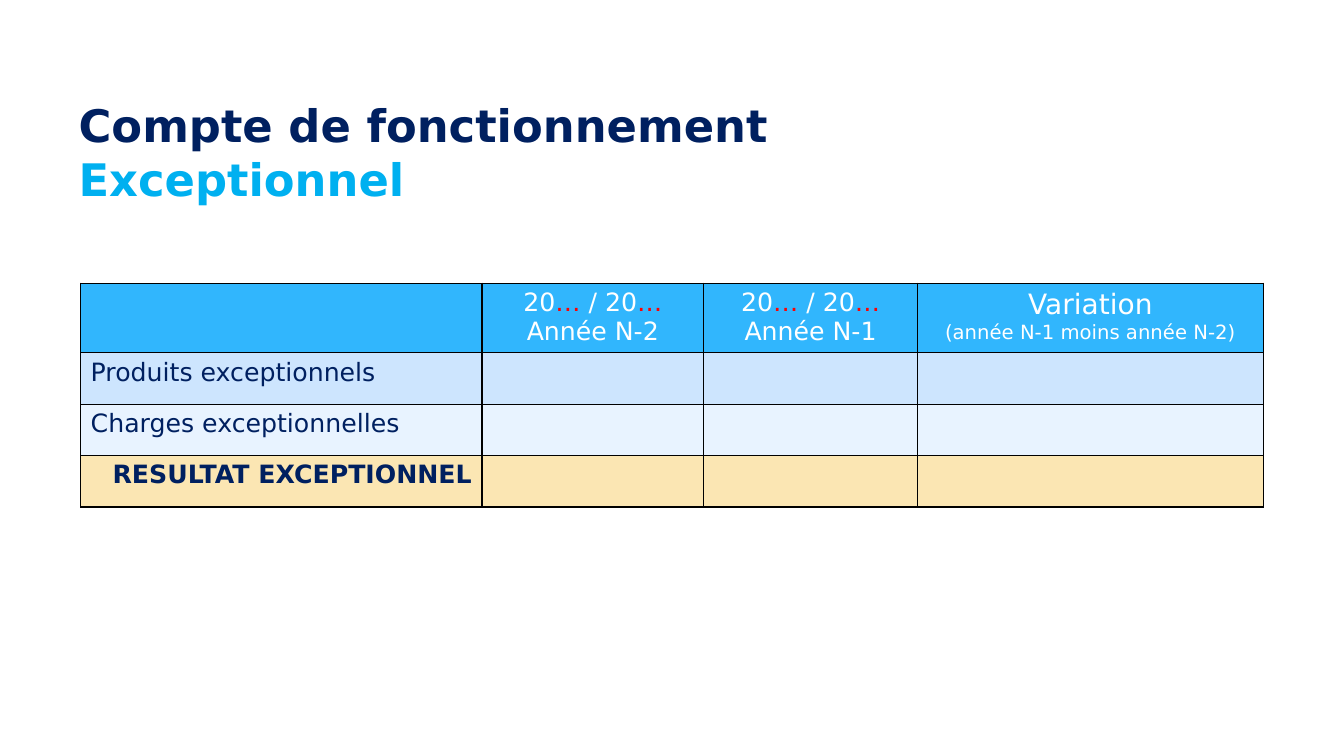
from lxml import etree
from pptx import Presentation
from pptx.dml.color import RGBColor
from pptx.enum import text
from pptx.oxml import ns
from pptx.util import Inches, Pt

FONT = "DejaVu Sans"
NAVY, SKY, WHITE, RED, BLACK = "002060", "00B0F0", "FFFFFF", "FF0000", "000000"
HEADER_FILL = "31B6FD"
LEFT, CENTER, RIGHT = text.PP_ALIGN.LEFT, text.PP_ALIGN.CENTER, text.PP_ALIGN.RIGHT

COLUMN_WIDTHS = [3.98, 2.2, 2.12, 3.43]
ROW_HEIGHTS = [0.69, 0.51, 0.51, 0.51]
ACCOUNT_ROWS = [
    ("Produits exceptionnels", "CDE5FE", LEFT, False),
    ("Charges exceptionnelles", "E8F3FF", LEFT, False),
    ("RESULTAT EXCEPTIONNEL", "FBE6B3", RIGHT, True),
]


def rgb(value):
    return RGBColor.from_string(value)


def format_span(span, size, color, bold=False):
    span.font.name = FONT
    span.font.size = Pt(size)
    span.font.bold = bold
    span.font.color.rgb = rgb(color)


def add_spans(para, pieces, size):
    """Add (wording, colour) pieces to a centred paragraph."""
    para.alignment = CENTER
    for wording, color in pieces:
        span = para.add_run()
        span.text = wording
        format_span(span, size, color)


def style_cell(cell, fill):
    """Give the cell black borders, then its fill, in schema order."""
    properties = cell._tc.get_or_add_tcPr()
    for side in ("lnL", "lnR", "lnT", "lnB"):
        line = etree.SubElement(properties, ns.qn(f"a:{side}"), w=str(Pt(1)))
        solid = etree.SubElement(line, ns.qn("a:solidFill"))
        etree.SubElement(solid, ns.qn("a:srgbClr"), val=BLACK)
    cell.fill.solid()
    cell.fill.fore_color.rgb = rgb(fill)


def add_title(page, left, top, width, height):
    title = page.shapes.title
    title.left, title.top = Inches(left), Inches(top)
    title.width, title.height = Inches(width), Inches(height)
    frame = title.text_frame
    frame.text = "Compte de fonctionnement\vExceptionnel"
    frame.word_wrap = True
    frame.auto_size = text.MSO_AUTO_SIZE.NONE
    frame.vertical_anchor = text.MSO_ANCHOR.TOP
    para = frame.paragraphs[0]
    para.alignment = LEFT
    for span, color in zip(para.runs, (NAVY, SKY)):
        format_span(span, 32, color, bold=True)
    # The line break keeps the title size too
    line_break = para._p.find(ns.qn("a:br"))
    etree.SubElement(line_break, ns.qn("a:rPr"), sz="3200")


def fill_header(table):
    for column, year in ((1, "Année N-2"), (2, "Année N-1")):
        frame = table.cell(0, column).text_frame
        period = [("20", WHITE), ("… ", RED), ("/ 20", WHITE), ("…", RED)]
        add_spans(frame.paragraphs[0], period, 18)
        add_spans(frame.add_paragraph(), [(year, WHITE)], 18)
    frame = table.cell(0, 3).text_frame
    add_spans(frame.paragraphs[0], [("Variation", WHITE)], 20)
    add_spans(frame.add_paragraph(), [("(année N-1 moins année N-2)", WHITE)], 14)


def add_account_table(page, left, top):
    table = page.shapes.add_table(
        len(ROW_HEIGHTS), len(COLUMN_WIDTHS), Inches(left), Inches(top),
        Inches(sum(COLUMN_WIDTHS)), Inches(sum(ROW_HEIGHTS))).table
    for column, width in zip(table.columns, COLUMN_WIDTHS):
        column.width = Inches(width)
    fills = [HEADER_FILL] + [fill for _, fill, _, _ in ACCOUNT_ROWS]
    for row, height, fill in zip(table.rows, ROW_HEIGHTS, fills):
        row.height = Inches(height)
        for cell in row.cells:
            style_cell(cell, fill)
    fill_header(table)
    for index, (label, _, alignment, bold) in enumerate(ACCOUNT_ROWS, 1):
        para = table.cell(index, 0).text_frame.paragraphs[0]
        para.text = label
        para.alignment = alignment
        format_span(para.runs[0], 18, NAVY, bold)


def main():
    deck = Presentation()
    deck.slide_width, deck.slide_height = Inches(13.33), Inches(7.5)
    page = deck.slides.add_slide(deck.slide_layouts.get_by_name("Title Only"))
    add_title(page, 0.68, 0.92, 10.57, 0.87)
    add_account_table(page, 0.8, 2.81)
    deck.save("out.pptx")


if __name__ == "__main__":
    main()
